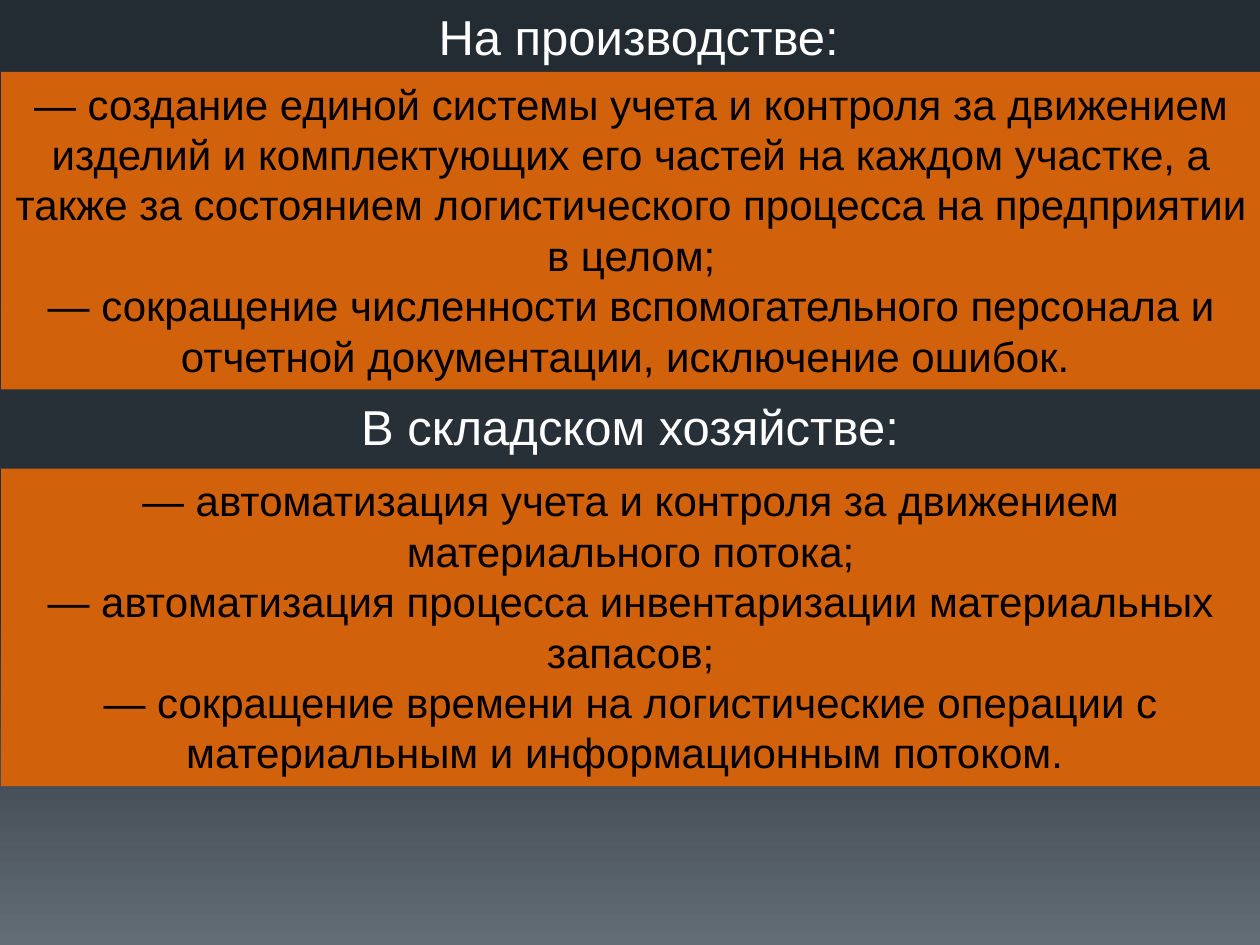
from copy import deepcopy
from pptx import Presentation
from pptx.dml.color import RGBColor
from pptx.enum.shapes import MSO_SHAPE
from pptx.enum.text import MSO_ANCHOR, MSO_AUTO_SIZE, PP_ALIGN
from pptx.util import Inches, Pt


def paint(color, code):
    color.rgb = RGBColor.from_string(code)


def write(shape, text, size, code):
    frame = shape.text_frame
    frame.text = text
    frame.auto_size = MSO_AUTO_SIZE.SHAPE_TO_FIT_TEXT
    frame.vertical_anchor = MSO_ANCHOR.TOP
    for para in frame.paragraphs:
        para.alignment = PP_ALIGN.CENTER
        for run in para.runs:
            run.font.name = "Arial"
            run.font.size = Pt(size)
            paint(run.font.color, code)


deck = Presentation()
deck.slide_width = Inches(10)
deck.slide_height = Inches(7.5)
slide = deck.slides.add_slide(deck.slide_layouts[6])

fill = slide.background.fill
fill.gradient()
fill.gradient_angle = 270
stops = slide.element.xpath(".//a:gsLst")[0]
stops.append(deepcopy(stops[0]))
shades = [(0, "242C33"), (0.65, "273037"), (1, "636D76")]
for stop, (place, code) in zip(fill.gradient_stops, shades):
    stop.position = place
    paint(stop.color, code)

parts = [
    (" На производстве:", 3.25, 0, 3.53, 0.57, 10, [
        "— создание единой системы учета и контроля за движением изделий и комплектующих его частей на каждом участке, а также за состоянием логистического процесса на предприятии в целом;",
        "— сокращение численности вспомогательного персонала и отчетной документации, исключение ошибок. ",
    ]),
    ("В складском хозяйстве:", 2.74, 3.1, 4.52, 3.72, 9.99, [
        "— автоматизация учета и контроля за движением материального потока;",
        "— автоматизация процесса инвентаризации материальных запасов;",
        "— сокращение времени на логистические операции с материальным и информационным потоком. ",
    ]),
]
for title, left, top, width, start, span, goals in parts:
    head = slide.shapes.add_textbox(
        Inches(left), Inches(top), Inches(width), Inches(0.57))
    write(head, title, 28, "FFFFFF")
    head.text_frame.word_wrap = False

    panel = slide.shapes.add_shape(
        MSO_SHAPE.RECTANGLE, Inches(0.01), Inches(start), Inches(span), Inches(2.52))
    panel.shadow.inherit = False
    panel.fill.solid()
    paint(panel.fill.fore_color, "D2610C")
    panel.line.fill.background()
    write(panel, "\n".join(goals), 24, "000000")
    panel.text_frame.word_wrap = True

deck.save("out.pptx")
